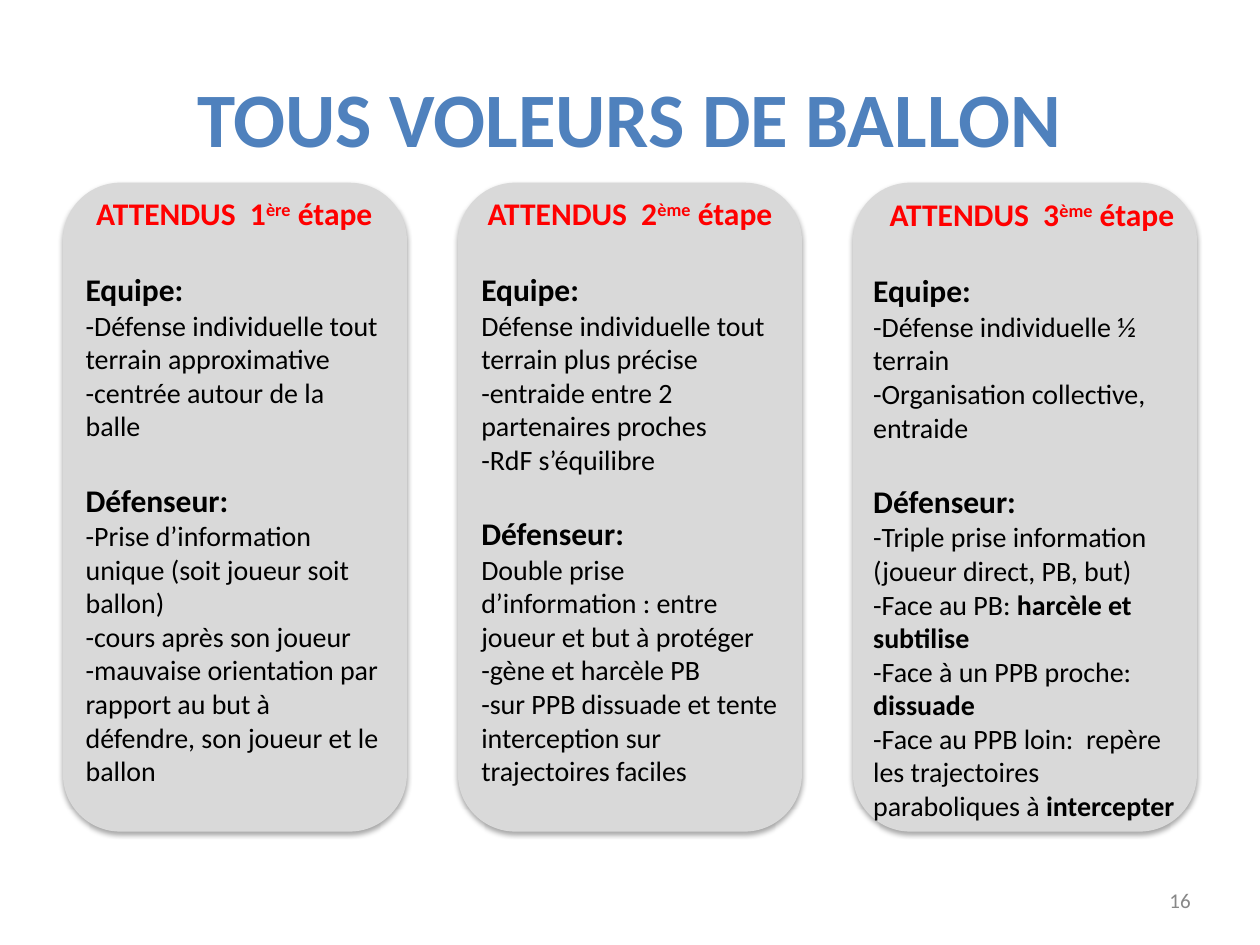
import pptx
import pptx.util
import pptx.dml.color
import pptx.enum.shapes
import pptx.enum.text
import pptx.oxml
import pptx.oxml.ns

Inches, Pt = pptx.util.Inches, pptx.util.Pt
ALIGN = pptx.enum.text.PP_ALIGN
ANCHOR = pptx.enum.text.MSO_ANCHOR

# Content: plain strings are normal lines, tuples alternate normal and bold runs
TITLE = "TOUS VOLEURS DE BALLON"
PAGE = "16"
STAGES = [
    {"number": "1", "ordinal": "ère",
     "Equipe:": ["-Défense individuelle tout terrain approximative",
                 "-centrée autour de la balle"],
     "Défenseur:": ["-Prise d’information unique (soit joueur soit ballon)",
                    "-cours après son joueur",
                    "-mauvaise orientation par rapport au but à défendre, "
                    "son joueur et le ballon"]},
    {"number": "2", "ordinal": "ème",
     "Equipe:": ["Défense individuelle tout terrain plus précise",
                 "-entraide entre 2 partenaires proches",
                 "-RdF s’équilibre"],
     "Défenseur:": ["Double prise d’information : entre joueur et but à protéger",
                    "-gène et harcèle PB",
                    "-sur PPB dissuade et tente interception sur trajectoires faciles"]},
    {"number": "3", "ordinal": "ème",
     "Equipe:": ["-Défense individuelle ½ terrain",
                 "-Organisation collective, entraide"],
     "Défenseur:": ["-Triple prise information (joueur direct, PB, but)",
                    ("-Face au PB: ", "harcèle et subtilise"),
                    ("-Face à un PPB proche: ", "dissuade"),
                    ("-Face au PPB loin:  repère les trajectoires paraboliques à ",
                     "intercepter")]},
]
COLORS = {"title": "4F81BD", "card": "D9D9D9", "heading": "FF0000",
          "text": "000000", "page": "888888"}
FONT = "Calibri"

# Layout in inches
CARD_LEFT, CARD_TOP, CARD_W, CARD_H = 0.5, 1.45, 2.73, 5.15
CARD_STEP = (9.5 - CARD_W - CARD_LEFT) / (len(STAGES) - 1)
TEXT_BOXES = [(0.63, 1.49, 2.46, 4.85), (3.77, 1.49, 2.46, 5.12),
              (6.88, 1.5, 2.62, 5.12)]
BLANK_LINE = 22  # points

SHADOW = (
    '<a:effectLst %s><a:outerShdw blurRad="%d" dist="%d" dir="5400000" rotWithShape="0">'
    '<a:srgbClr val="000000"><a:alpha val="35000"/></a:srgbClr></a:outerShdw></a:effectLst>'
    % (pptx.oxml.ns.nsdecls("a"), Pt(3), Pt(1.8)))


def rgb(name):
    return pptx.dml.color.RGBColor.from_string(COLORS[name])


def add_run(p, text, size, color="text", bold=False, raised=False):
    r = p.add_run()
    r.text = text
    r.font.name, r.font.size, r.font.bold = FONT, Pt(size), bold
    r.font.color.rgb = rgb(color)
    if raised:
        r._r.get_or_add_rPr().set("baseline", "30000")


def add_text(s, box, anchor, align, wrap=True):
    tf = s.shapes.add_textbox(*map(Inches, box)).text_frame
    tf.word_wrap = wrap
    tf.vertical_anchor = anchor
    tf.margin_left = tf.margin_right = tf.margin_top = tf.margin_bottom = Inches(0.05)
    p = tf.paragraphs[0]
    p.alignment = align
    return tf, p


def add_card(s, left):
    sp = s.shapes.add_shape(pptx.enum.shapes.MSO_SHAPE.ROUNDED_RECTANGLE,
                            Inches(left), Inches(CARD_TOP), Inches(CARD_W), Inches(CARD_H))
    sp.adjustments[0] = 0.167
    sp.fill.solid()
    sp.fill.fore_color.rgb = rgb("card")
    sp.line.fill.background()
    sp._element.spPr.append(pptx.oxml.parse_xml(SHADOW))


def add_stage(s, stage, box):
    tf, p = add_text(s, box, ANCHOR.TOP, ALIGN.CENTER)
    add_run(p, "ATTENDUS  " + stage["number"], 18, "heading", True)
    add_run(p, stage["ordinal"], 18, "heading", True, raised=True)
    add_run(p, " étape", 18, "heading", True)
    for role in ("Equipe:", "Défenseur:"):
        p = tf.add_paragraph()
        p.space_before = Pt(BLANK_LINE)
        add_run(p, role, 18, bold=True)
        for line in stage[role]:
            p = tf.add_paragraph()
            parts = (line,) if isinstance(line, str) else line
            for i, part in enumerate(parts):
                add_run(p, part, 16, bold=i % 2 == 1)


def main():
    prs = pptx.Presentation()
    prs.slide_width, prs.slide_height = Inches(10), Inches(7.5)
    s = prs.slides.add_slide(prs.slide_layouts[6])

    # Title
    tf, p = add_text(s, (0.5, 0.3, 9, 1.25), ANCHOR.MIDDLE, ALIGN.CENTER)
    add_run(p, TITLE, 44, "title", True)

    # One card per stage
    for i, (stage, box) in enumerate(zip(STAGES, TEXT_BOXES)):
        add_card(s, CARD_LEFT + i * CARD_STEP)
        add_stage(s, stage, box)

    # Page number
    tf, p = add_text(s, (9.22, 7, 0.28, 0.29), ANCHOR.MIDDLE, ALIGN.RIGHT, wrap=False)
    add_run(p, PAGE, 12, "page")

    prs.save("out.pptx")


if __name__ == "__main__":
    main()
